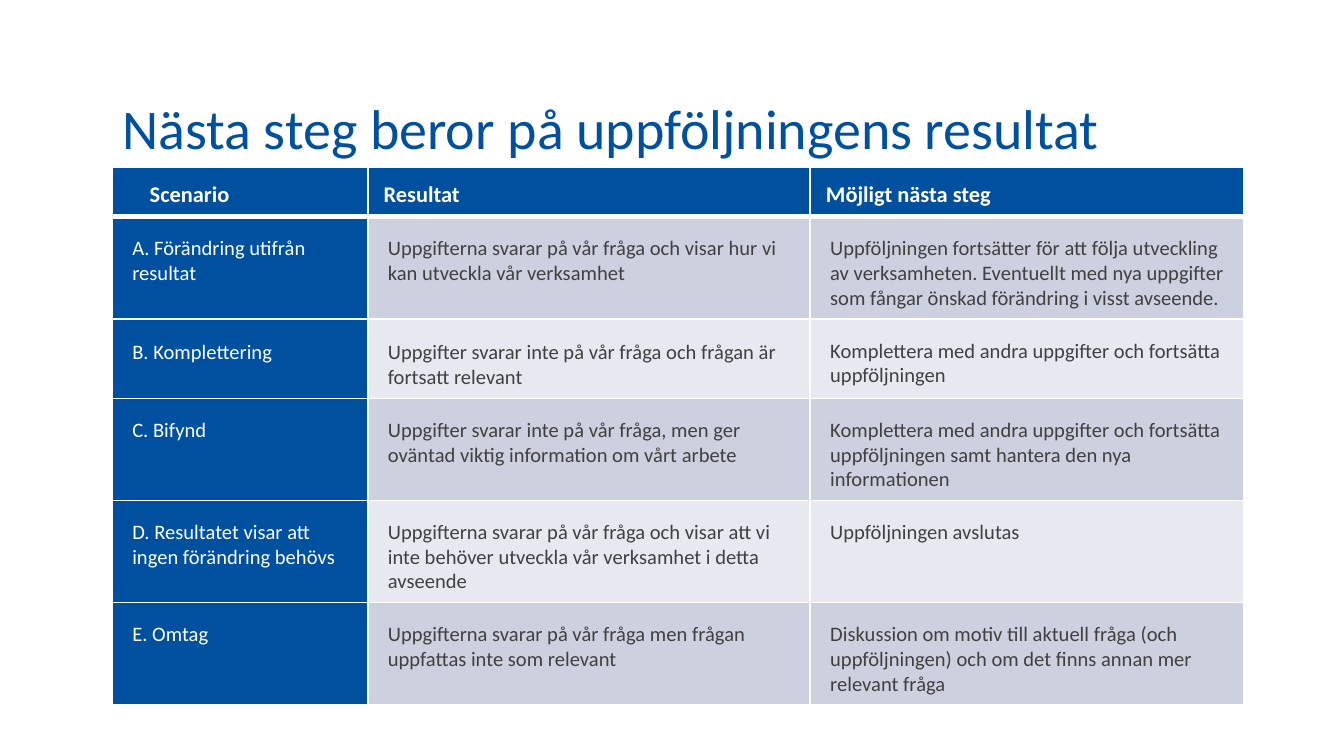
from lxml import etree
from pptx import Presentation
from pptx import util as u
from pptx.dml.color import RGBColor
from pptx.enum import text
from pptx.oxml import ns

BLUE = RGBColor(0x00, 0x50, 0xA0)
WHITE = RGBColor(0xFF, 0xFF, 0xFF)
GRAY = RGBColor(0x40, 0x40, 0x40)
BAND_DARK = RGBColor(0xCC, 0xD0, 0xDF)
BAND_LIGHT = RGBColor(0xE7, 0xE9, 0xF0)
FONT = "Calibri"

TITLE = "Nästa steg beror på uppföljningens resultat"
HEADINGS = ["Scenario", "Resultat", "Möjligt nästa steg"]
SCENARIOS = [
    ["A. Förändring utifrån resultat",
     "Uppgifterna svarar på vår fråga och visar hur vi kan utveckla vår verksamhet",
     "Uppföljningen fortsätter för att följa utveckling av verksamheten. "
     "Eventuellt med nya uppgifter som fångar önskad förändring i visst avseende."],
    ["B. Komplettering",
     "Uppgifter svarar inte på vår fråga och frågan är fortsatt relevant",
     "Komplettera med andra uppgifter och fortsätta uppföljningen"],
    ["C. Bifynd",
     "Uppgifter svarar inte på vår fråga, men ger oväntad viktig information om vårt arbete",
     "Komplettera med andra uppgifter och fortsätta uppföljningen samt hantera den nya informationen"],
    ["D. Resultatet visar att ingen förändring behövs",
     "Uppgifterna svarar på vår fråga och visar att vi inte behöver utveckla "
     "vår verksamhet i detta avseende",
     "Uppföljningen avslutas"],
    ["E. Omtag",
     "Uppgifterna svarar på vår fråga men frågan uppfattas inte som relevant",
     "Diskussion om motiv till aktuell fråga (och uppföljningen) och om det finns "
     "annan mer relevant fråga"],
]
COLUMN_WIDTHS = [4.83, 8.36, 8.2]
ROW_HEIGHTS = [0.91, 1.85, 1.47, 1.85, 1.85, 1.85]


def add_run(paragraph, words, size, color, bold=False):
    run = paragraph.add_run()
    run.text = words
    run.font.name = FONT
    run.font.size = u.Pt(size)
    run.font.bold = bold
    run.font.color.rgb = color


def set_margins(target, left, top, right, bottom):
    target.margin_left, target.margin_top = u.Cm(left), u.Cm(top)
    target.margin_right, target.margin_bottom = u.Cm(right), u.Cm(bottom)


def set_borders(cell, bottom_width):
    properties = cell._tc.get_or_add_tcPr()
    for side, width in (("lnL", 1), ("lnR", 1), ("lnT", 1), ("lnB", bottom_width)):
        line = etree.SubElement(properties, ns.qn(f"a:{side}"), w=str(u.Pt(width)))
        fill = etree.SubElement(line, ns.qn("a:solidFill"))
        etree.SubElement(fill, ns.qn("a:srgbClr"), val=str(WHITE))


def fill_cell(cell, words, background, color, size, line_spacing, is_heading):
    set_borders(cell, 3 if is_heading else 1)
    cell.fill.solid()
    cell.fill.fore_color.rgb = background
    inset = 0.3 if is_heading else 0.38
    set_margins(cell, inset, inset, 0.3, 0.15)
    cell.vertical_anchor = text.MSO_ANCHOR.MIDDLE if is_heading else text.MSO_ANCHOR.TOP
    paragraph = cell.text_frame.paragraphs[0]
    paragraph.line_spacing = u.Pt(line_spacing)
    add_run(paragraph, words, size, color, is_heading)


def add_title(slide, left, top, width, height):
    frame = slide.shapes.add_textbox(u.Cm(left), u.Cm(top), u.Cm(width), u.Cm(height)).text_frame
    frame.word_wrap = True
    frame.vertical_anchor = text.MSO_ANCHOR.MIDDLE
    set_margins(frame, 0.19, 0.1, 0.19, 0.1)
    add_run(frame.paragraphs[0], TITLE, 30, BLUE)


def add_scenario_table(slide, left, top, width, height):
    table = slide.shapes.add_table(len(SCENARIOS) + 1, len(HEADINGS), u.Cm(left), u.Cm(top),
                                   u.Cm(width), u.Cm(height)).table
    for column, share in zip(table.columns, COLUMN_WIDTHS):
        column.width = u.Cm(width * share / sum(COLUMN_WIDTHS))
    for row, share in zip(table.rows, ROW_HEIGHTS):
        row.height = u.Cm(height * share / sum(ROW_HEIGHTS))
    for column, heading in enumerate(HEADINGS):
        fill_cell(table.cell(0, column), heading, BLUE, WHITE, 12, 13.8, True)
    first = table.cell(0, 0).text_frame.paragraphs[0]
    first._p.get_or_add_pPr().set("indent", str(u.Cm(0.41)))
    for row, scenario in enumerate(SCENARIOS, 1):
        band = BAND_DARK if row % 2 else BAND_LIGHT
        for column, words in enumerate(scenario):
            background, color = (band, GRAY) if column else (BLUE, WHITE)
            spacing = 13.8 if row == 2 and column < 2 else 13.2
            fill_cell(table.cell(row, column), words, background, color, 11, spacing, False)


def main():
    presentation = Presentation()
    presentation.slide_width, presentation.slide_height = u.Cm(25.4), u.Cm(14.29)
    slide = presentation.slides.add_slide(presentation.slide_layouts[6])
    add_title(slide, 2.12, 1.6, 21.4, 1.62)
    add_scenario_table(slide, 2.12, 3.16, sum(COLUMN_WIDTHS), sum(ROW_HEIGHTS))
    presentation.save("out.pptx")


if __name__ == "__main__":
    main()
